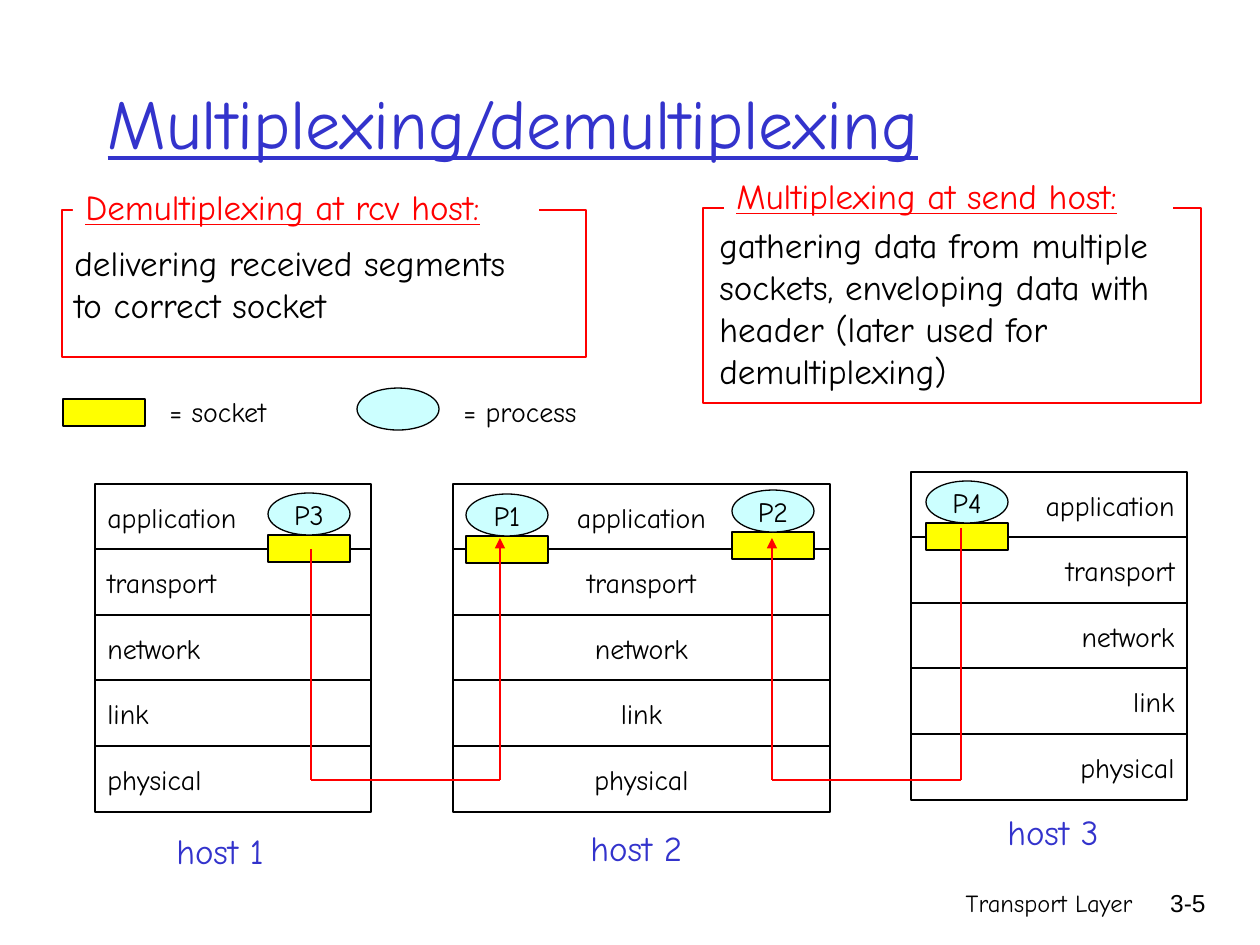
"""Build the multiplexing and demultiplexing slide with three protocol stacks."""
from dataclasses import dataclass

from lxml.etree import SubElement
from pptx import Presentation
from pptx.dml.color import RGBColor
from pptx.enum.shapes import MSO_CONNECTOR, MSO_SHAPE
from pptx.enum.text import MSO_ANCHOR, PP_ALIGN
from pptx.oxml.ns import qn
from pptx.util import Emu, Pt


@dataclass(frozen=True)
class Theme:
    font: str = "Comic Neue"
    number_font: str = "Arial"
    black: str = "000000"
    white: str = "FFFFFF"
    blue: str = "3333CC"
    red: str = "FF0000"
    yellow: str = "FFFF00"
    cyan: str = "CCFFFF"
    title: int = 40
    body: int = 20
    label: int = 16
    footer: int = 14
    thin: float = 0.75
    thick: float = 1.5


theme = Theme()
SCALE = 914400 / 126
LEFT, CENTER, RIGHT = PP_ALIGN.LEFT, PP_ALIGN.CENTER, PP_ALIGN.RIGHT
TOP, MIDDLE = MSO_ANCHOR.TOP, MSO_ANCHOR.MIDDLE
SOCKET = (MSO_SHAPE.RECTANGLE, 27, theme.yellow)
PROCESS = (MSO_SHAPE.OVAL, 42, theme.cyan)
MARK_WIDTH = 82


def write(box, text, *, size=theme.label, color=theme.black, font=theme.font,
          align=LEFT, anchor=TOP, underline=None, wrap=True):
    frame = box.text_frame
    frame.word_wrap = wrap
    frame.vertical_anchor = anchor
    frame.text = text
    for para in frame.paragraphs:
        para.alignment = align
        for span in para.runs:
            span.font.name = font
            span.font.size = Pt(size)
            span.font.underline = underline
            span.font.color.rgb = RGBColor.from_string(color)


def draw(kind, *bounds, fill=None, line=theme.black, weight=theme.thin):
    box = page.shapes.add_shape(kind, *[Emu(round(px * SCALE)) for px in bounds])
    box.shadow.inherit = False
    if fill:
        box.fill.solid()
        box.fill.fore_color.rgb = RGBColor.from_string(fill)
    else:
        box.fill.background()
    if line:
        box.line.color.rgb = RGBColor.from_string(line)
        box.line.width = Pt(weight)
    else:
        box.line.fill.background()
    return box


deck = Presentation()
deck.slide_width = Emu(round(1260 * SCALE))
deck.slide_height = Emu(round(945 * SCALE))
page = deck.slides.add_slide(deck.slide_layouts[5])

title = page.shapes.title
title.left, title.top, title.width, title.height = [
    Emu(round(px * SCALE)) for px in (95, 42, 1071, 158)]
write(title, "Multiplexing/demultiplexing", size=theme.title, color=theme.blue,
      anchor=MIDDLE, underline=True)

layers = ["application", "transport", "network", "link", "physical"]
stacks = [(95, 484, 276, LEFT), (911, 472, 276, RIGHT), (453, 484, 377, CENTER)]
for left, top, width, align in stacks:
    for row, layer in enumerate(layers):
        cell = draw(MSO_SHAPE.RECTANGLE, left, top + row * 328 // 5, width, 66,
                    fill=theme.white)
        write(cell, layer, align=align, anchor=MIDDLE)

processes = [("P2", 732, 490), ("P3", 268, 493), ("P4", 926, 481), ("P1", 466, 494)]
for name, left, top in processes:
    for (kind, height, fill), offset in ((SOCKET, 42), (PROCESS, 0)):
        mark = draw(kind, left, top + offset, MARK_WIDTH, height, fill=fill)
    write(mark, name, align=CENTER, anchor=MIDDLE, wrap=False)

for (kind, height, fill), left, top in ((SOCKET, 63, 399), (PROCESS, 357, 388)):
    draw(kind, left, top, MARK_WIDTH, height, fill=fill)

routes = [
    (311, 549, 311, 780, False), (311, 780, 500, 780, False),
    (500, 780, 500, 538, True), (961, 528, 961, 780, False),
    (772, 780, 961, 780, False), (772, 780, 772, 538, True),
]
for *points, arrow in routes:
    route = page.shapes.add_connector(
        MSO_CONNECTOR.STRAIGHT, *[Emu(round(px * SCALE)) for px in points])
    route.line.color.rgb = RGBColor.from_string(theme.red)
    route.line.width = Pt(theme.thick)
    if arrow:
        SubElement(route.line._get_or_add_ln(), qn("a:tailEnd"), type="triangle")
    SubElement(route._element.spPr, qn("a:effectLst"))

demux = draw(MSO_SHAPE.RECTANGLE, 62, 210, 524, 147, line=theme.red, weight=theme.thick)
write(demux, "delivering received segments\nto correct socket", size=theme.body,
      anchor=MIDDLE)
draw(MSO_SHAPE.RECTANGLE, 703, 208, 498, 195, line=theme.red, weight=theme.thick)

headings = [
    ("Demultiplexing at rcv host:", 73, 179, 466),
    ("Multiplexing at send host:", 724, 168, 449),
]
for text, left, top, width in headings:
    heading = draw(MSO_SHAPE.RECTANGLE, left, top, width, 54, fill=theme.white, line=None)
    write(heading, text, size=theme.body, color=theme.red, underline=True)

gathering = ("gathering data from multiple\nsockets, enveloping data with\n"
             "header (later used for\ndemultiplexing)")
body = {"size": theme.body}
host = {"size": theme.body, "color": theme.blue}
footer = {"size": theme.footer, "align": RIGHT}
captions = [
    (gathering, 707, 217, 513, 180, body),
    ("= socket", 157, 388, 134, 47, {}),
    ("= process", 451, 388, 147, 47, {}),
    ("host 1", 164, 823, 123, 54, host),
    ("host 2", 578, 820, 130, 54, host),
    ("host 3", 995, 804, 130, 54, host),
    ("Transport Layer", 746, 882, 399, 63, footer),
    ("3-5", 1125, 882, 93, 63, {**footer, "font": theme.number_font}),
]
for text, *bounds, style in captions:
    caption = page.shapes.add_textbox(*[Emu(round(px * SCALE)) for px in bounds])
    write(caption, text, **style)

deck.save("out.pptx")
